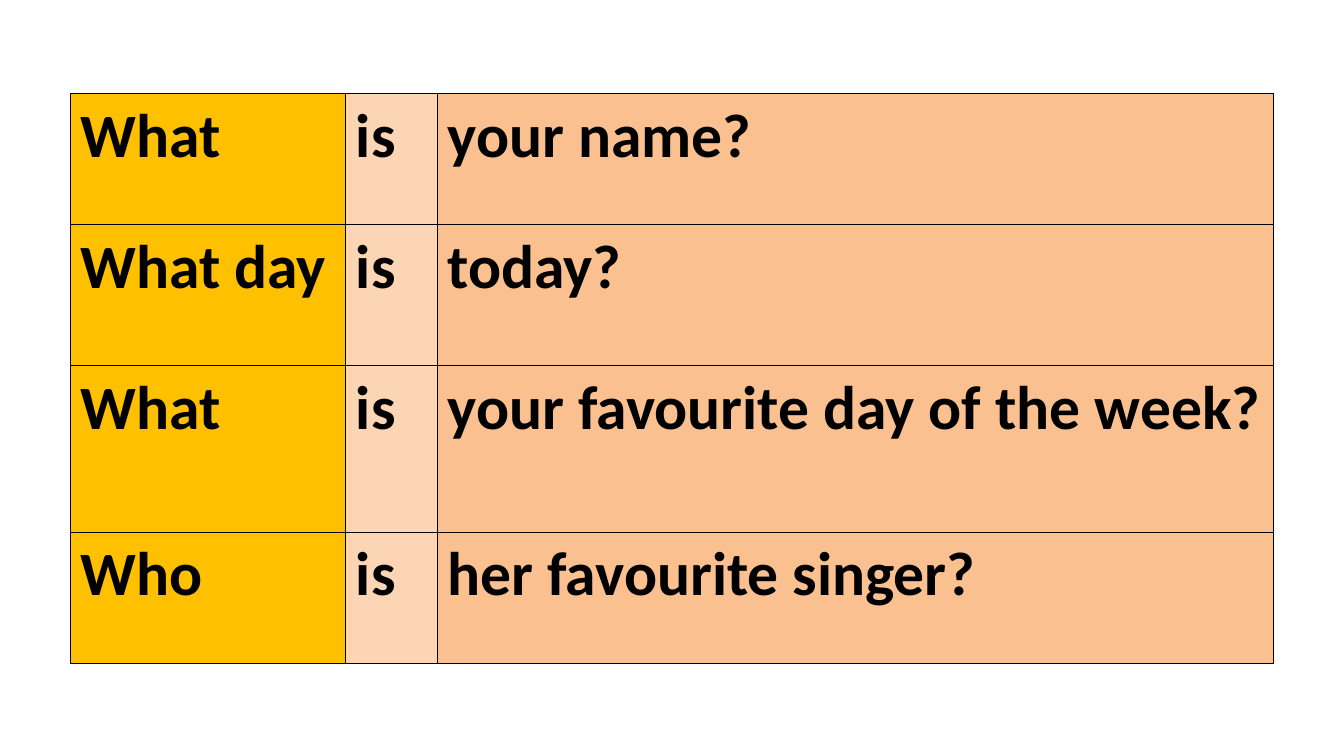
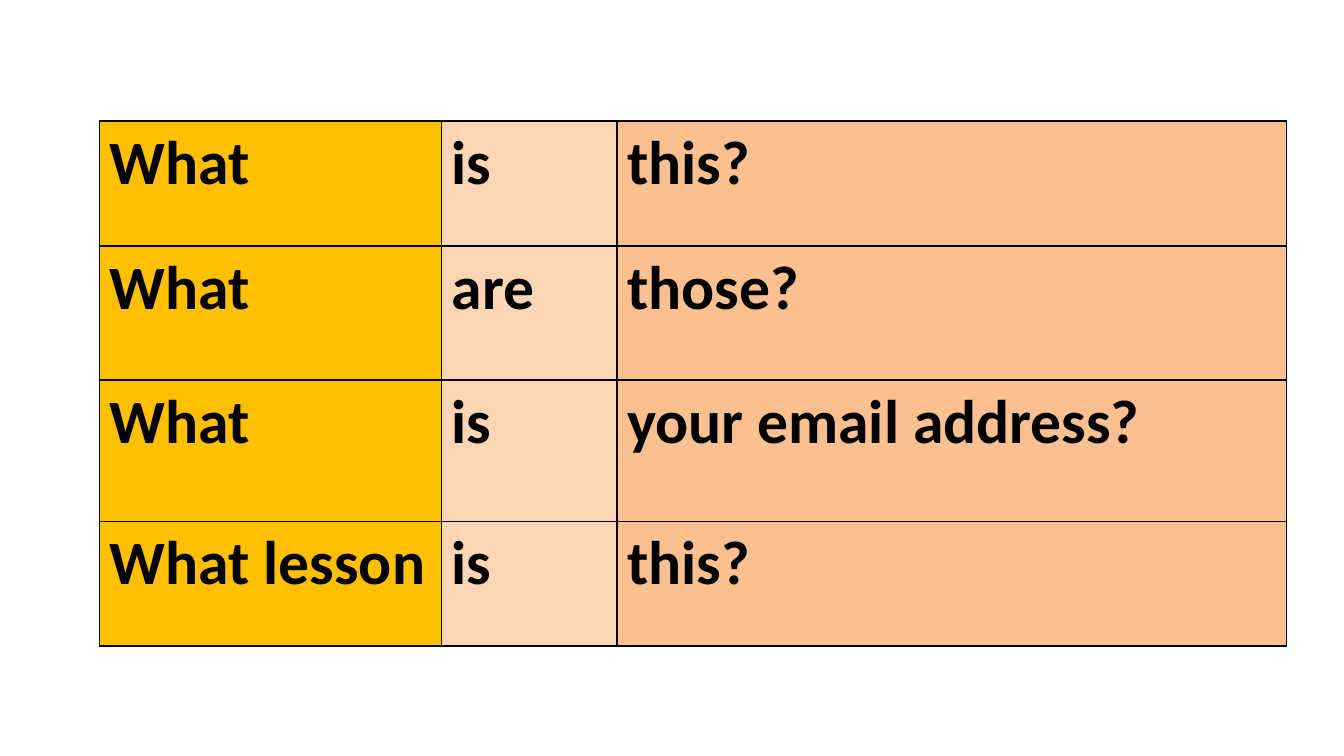
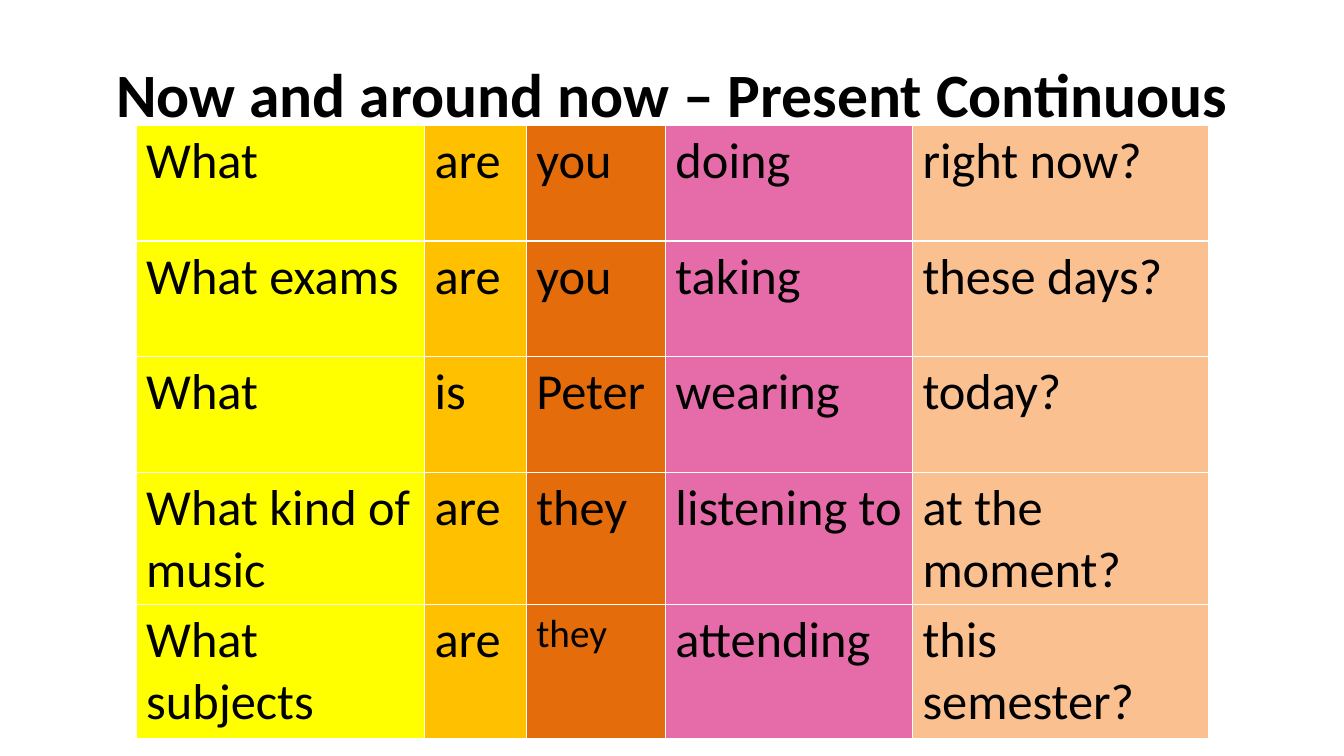
from pptx import Presentation
from pptx.dml.color import RGBColor
from pptx.enum.text import MSO_ANCHOR as Anchor, PP_ALIGN as Align
from pptx.oxml import parse_xml
from pptx.oxml.ns import nsdecls
from pptx.util import Pt

SCALE = 9144  # EMU in one px, 100 px to the inch
FONT = "Calibri"
BLACK, WHITE = "000000", "FFFFFF"
GOLD, PEACH, CREAM = "FFC000", "FAC090", "FCD5B5"
YELLOW, ORANGE, PINK = "FFFF00", "E46C0A", "E66CA9"


def px(n):
    return n * SCALE


def rgb(code):
    return RGBColor.from_string(code)


class Deck:
    def __init__(self, wide, high):
        self.prs = Presentation()
        self.prs.slide_width, self.prs.slide_height = px(wide), px(high)
        self.slide = None

    def add(self, layout):
        self.slide = self.prs.slides.add_slide(
            self.prs.slide_layouts.get_by_name(layout))

    def style(self, para, size, bold):
        font = para.font
        font.name, font.size, font.bold = FONT, Pt(size), bold
        font.color.rgb = rgb(BLACK)

    def title(self, text, x, y, wide, high):
        box = self.slide.shapes.title
        box.left, box.top, box.width, box.height = map(px, (x, y, wide, high))
        frame = box.text_frame
        frame.text = text
        frame.vertical_anchor = Anchor.MIDDLE
        para = frame.paragraphs[0]
        para.alignment = Align.CENTER
        self.style(para, 44, True)

    def border(self, cell, code):
        props = cell._tc.get_or_add_tcPr()
        for side in "LRTB":
            props.append(parse_xml(
                f'<a:ln{side} {nsdecls("a")} w="12700"><a:solidFill>'
                f'<a:srgbClr val="{code}"/></a:solidFill></a:ln{side}>'))

    def table(self, rows, x, y, cols, highs, fills, line, size, bold):
        table = self.slide.shapes.add_table(
            len(rows), len(cols), px(x), px(y),
            px(sum(cols)), px(sum(highs))).table
        table.first_row = table.horz_banding = False
        for col, wide in zip(table.columns, cols):
            col.width = px(wide)
        for row, high, words in zip(table.rows, highs, rows):
            row.height = px(high)
            for cell, word, fill in zip(row.cells, words, fills):
                cell.text = word
                self.style(cell.text_frame.paragraphs[0], size, bold)
                self.border(cell, line)
                cell.fill.solid()
                cell.fill.fore_color.rgb = rgb(fill)
        return table


def main():
    deck = Deck(1333, 750)

    be_look = dict(fills=(GOLD, CREAM, PEACH), line=BLACK, size=44, bold=True)
    deck.add("Blank")
    deck.table([("What", "is", "your name?"),
                ("What day", "is", "today?"),
                ("What", "is", "your favourite day of the week?"),
                ("Who", "is", "her favourite singer?")],
               70, 93, (273, 91, 829), (130, 140, 165, 130), **be_look)

    deck.add("Blank")
    deck.table([("What", "is", "this?"),
                ("What", "are", "those?"),
                ("What", "is", "your email address?"),
                ("What lesson", "is", "this?")],
               99, 120, (339, 174, 664), (124, 133, 140, 124), **be_look)

    deck.add("Title Only")
    deck.title("Now and around now – Present Continuous", 67, 30, 1200, 125)
    now_look = dict(cols=(286, 101, 138, 245, 294), line=WHITE,
                    fills=(YELLOW, GOLD, ORANGE, PINK, PEACH),
                    size=36, bold=False)
    deck.table([("What", "are", "you", "doing", "right now?"),
                ("What exams", "are", "you", "taking", "these days?"),
                ("What", "is", "Peter", "wearing", "today?"),
                ("What kind of music", "are", "they", "listening to",
                 "at the moment?")],
               135, 124, highs=(115, 115, 115, 130), **now_look)
    last = deck.table([("What subjects", "are", "they", "attending",
                        "this semester?")],
                      135, 600, highs=(130,), **now_look)
    last.cell(0, 2).text_frame.paragraphs[0].font.size = Pt(28)

    deck.prs.save("out.pptx")


if __name__ == "__main__":
    main()
